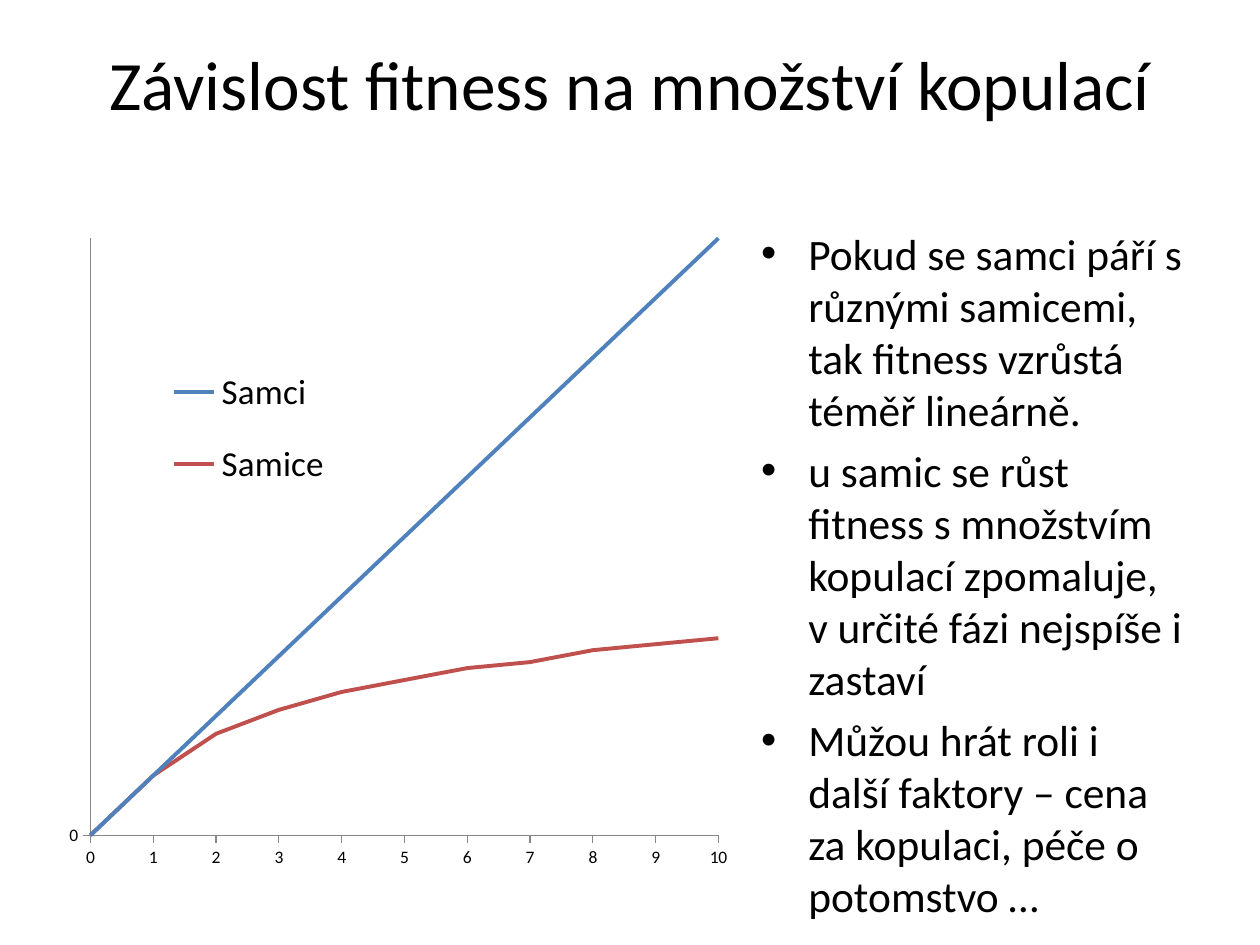
import pptx
import pptx.chart.data
import pptx.dml.color
import pptx.enum.chart
import pptx.enum.text
import pptx.oxml
import pptx.oxml.ns
import pptx.util

WIDTH, HEIGHT = 10, 7.5
FONT = "Calibri"
COLORS = {"text": "000000", "axis": "868686", "Samci": "4F81BD", "Samice": "C0504D"}
FITNESS = {
    "Samci": range(11),
    "Samice": [0, 1, 1.7, 2.1, 2.4, 2.6, 2.8, 2.9, 3.1, 3.2, 3.3],
}
POINTS = [
    "Pokud se samci páří s různými samicemi, tak fitness vzrůstá téměř lineárně.",
    "u samic se růst fitness s množstvím kopulací zpomaluje, v určité fázi nejspíše i zastaví",
    "Můžou hrát roli i další faktory – cena za kopulaci, péče o potomstvo …",
]


def rgb(name):
    return pptx.dml.color.RGBColor.from_string(COLORS[name])


def style_font(font, size):
    font.name = FONT
    font.size = pptx.util.Pt(size)
    font.color.rgb = rgb("text")


def style_line(line, color, width):
    line.color.rgb = rgb(color)
    line.width = pptx.util.Pt(width)


def box(*inches):
    return [pptx.util.Inches(length) for length in inches]


def fill_placeholder(placeholder, area, paragraphs, size):
    placeholder.left, placeholder.top, placeholder.width, placeholder.height = box(*area)
    frame = placeholder.text_frame
    frame.text = "\n".join(paragraphs)
    frame.word_wrap = True
    frame.auto_size = pptx.enum.text.MSO_AUTO_SIZE.NONE
    for paragraph in frame.paragraphs:
        for run in paragraph.runs:
            style_font(run.font, size)
    return frame


def manual_layout(x, y, w, h, inner=False):
    """Layout element placed by shares of the chart's size."""
    target = '<c:layoutTarget val="inner"/>' if inner else ""
    return pptx.oxml.parse_xml(
        f'<c:layout {pptx.oxml.ns.nsdecls("c")}><c:manualLayout>{target}'
        '<c:xMode val="edge"/><c:yMode val="edge"/>'
        f'<c:x val="{x}"/><c:y val="{y}"/><c:w val="{w}"/><c:h val="{h}"/>'
        "</c:manualLayout></c:layout>"
    )


def style_axis(axis, step):
    axis.minimum_scale, axis.maximum_scale, axis.major_unit = 0, 10, step
    axis.major_tick_mark = pptx.enum.chart.XL_TICK_MARK.OUTSIDE
    axis.minor_tick_mark = pptx.enum.chart.XL_TICK_MARK.NONE
    axis.tick_labels.number_format = "General"
    axis.tick_labels.number_format_is_linked = False
    style_font(axis.tick_labels.font, 10)
    style_line(axis.format.line, "axis", 0.75)


def add_fitness_chart(slide, area):
    data = pptx.chart.data.XyChartData()
    for name, values in FITNESS.items():
        series = data.add_series(name)
        for copulations, fitness in enumerate(values):
            series.add_data_point(copulations, fitness)
    chart = slide.shapes.add_chart(
        pptx.enum.chart.XL_CHART_TYPE.XY_SCATTER_SMOOTH_NO_MARKERS, *box(*area), data
    ).chart
    chart.has_title = False
    style_font(chart.font, 10)
    chart.plots[0].vary_by_categories = False
    for series in chart.plots[0].series:
        style_line(series.format.line, series.name, 2.25)

    style_axis(chart.category_axis, 1)
    style_axis(chart.value_axis, 12)
    chart.category_axis.has_major_gridlines = False
    chart.value_axis.has_major_gridlines = True
    style_line(chart.value_axis.major_gridlines.format.line, "axis", 0.75)

    chart.has_legend = True
    legend = chart.legend
    legend.position = pptx.enum.chart.XL_LEGEND_POSITION.RIGHT
    legend.include_in_layout = False
    style_font(legend.font, 20)

    tag = pptx.oxml.ns.qn("c:layout")
    plot_area = chart.element.chart.plotArea
    for parent, index, layout in (
        (plot_area, 0, manual_layout(0.053, 0.062, 0.918, 0.86, inner=True)),
        (legend._element, 1, manual_layout(0.15, 0.21, 0.27, 0.25)),
    ):
        for old in parent.findall(tag):
            parent.remove(old)
        parent.insert(index, layout)


def main():
    deck = pptx.Presentation()
    deck.slide_width, deck.slide_height = box(WIDTH, HEIGHT)
    slide = deck.slides.add_slide(deck.slide_layouts[1])
    title = fill_placeholder(
        slide.shapes.title, (0.5, 0, 9, 1.31), ["Závislost fitness na množství kopulací"], 39.6
    )
    title.vertical_anchor = pptx.enum.text.MSO_ANCHOR.MIDDLE
    body = fill_placeholder(slide.placeholders[1], (5.94, 1.75, 3.56, 4.95), POINTS, 24.8)
    body.paragraphs[0].space_before = pptx.util.Pt(0)
    add_fitness_chart(slide, (0.43, 1.55, 5.43, 5.51))
    deck.save("out.pptx")


if __name__ == "__main__":
    main()
